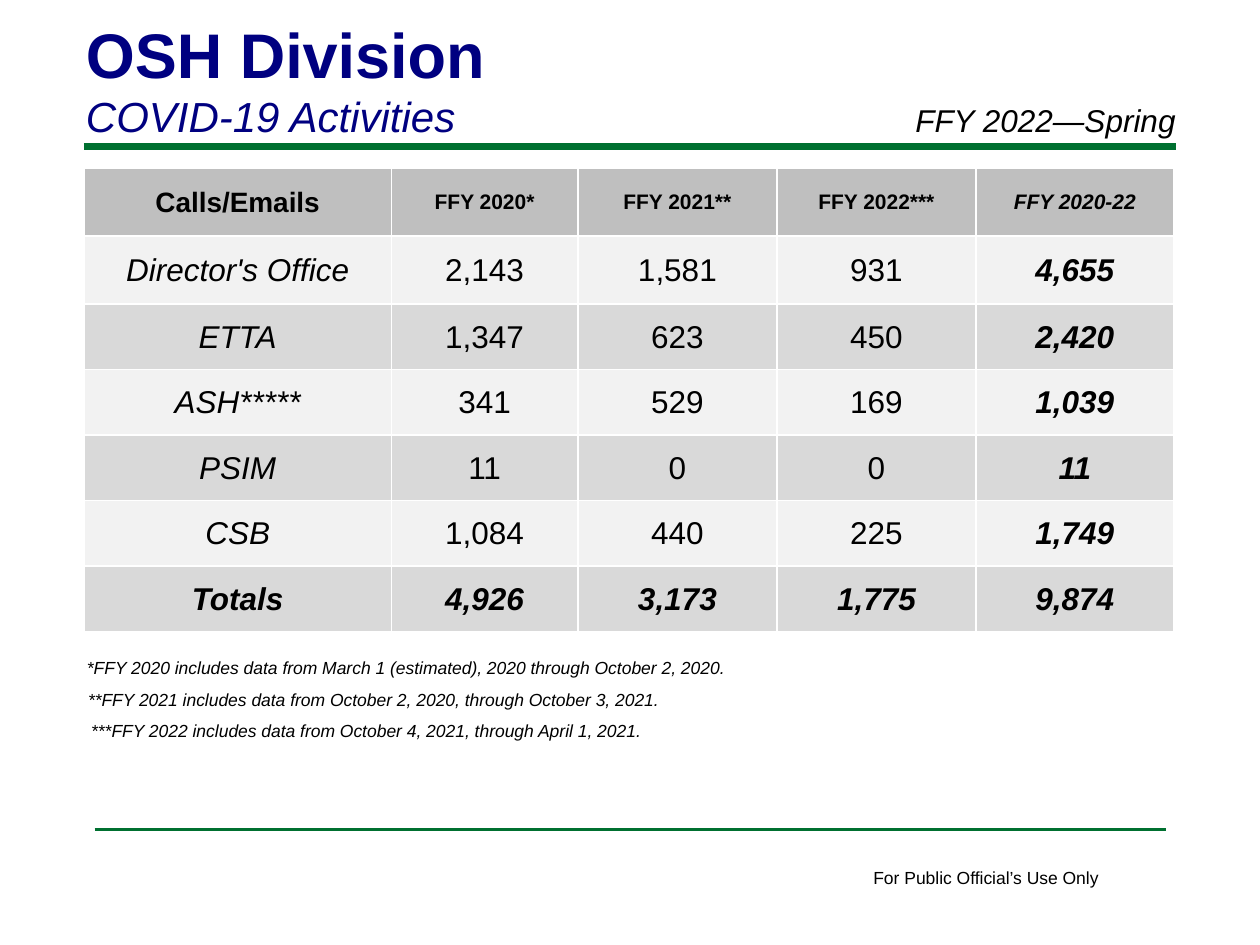
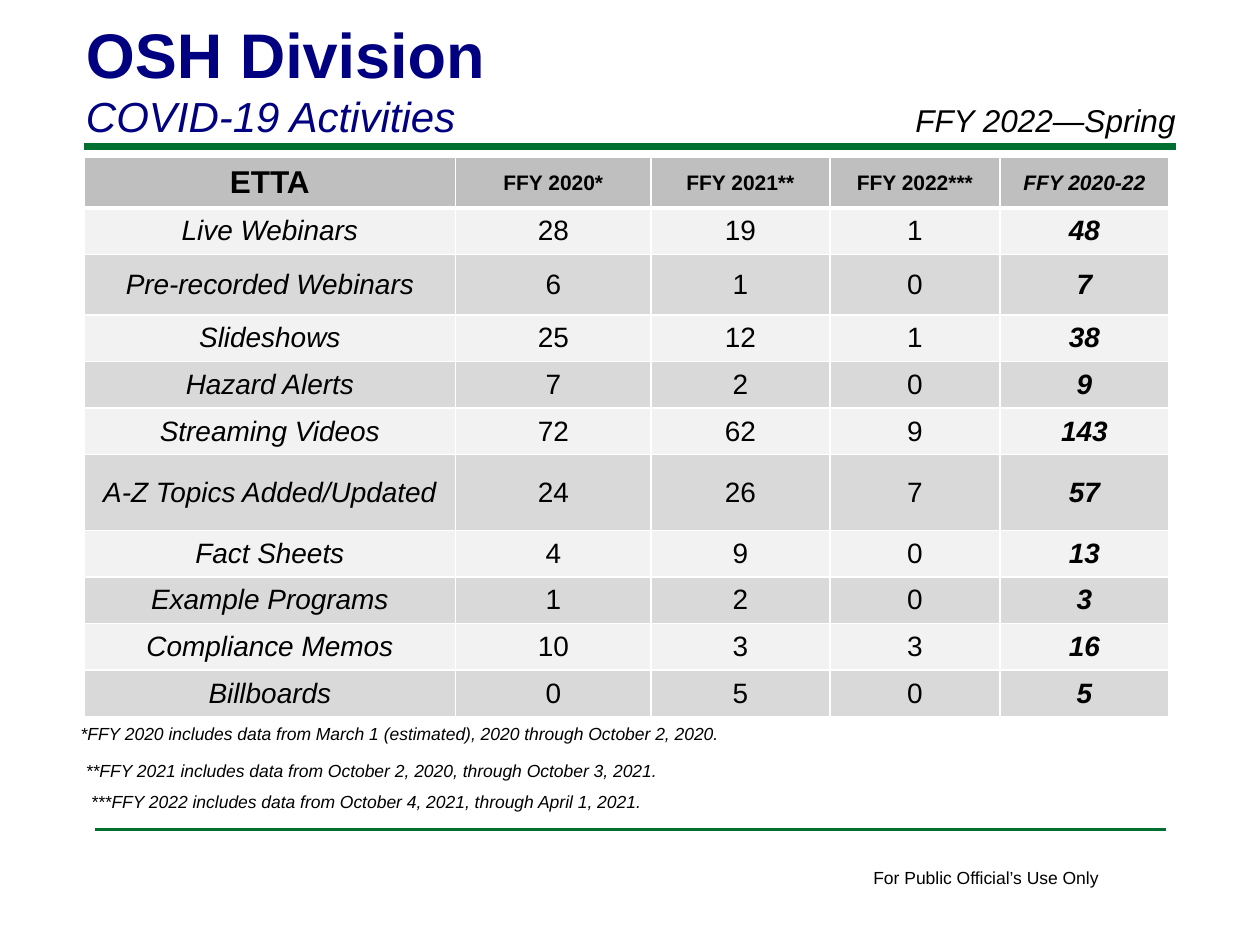
from lxml import etree
from pptx import Presentation
from pptx import util as u
from pptx.dml.color import RGBColor
from pptx.enum import shapes, text
from pptx.oxml import ns

FONT = "Arial"
GREEN = RGBColor(0x00, 0x70, 0x30)
NAVY = RGBColor(0x00, 0x00, 0x80)
BLACK = RGBColor(0x00, 0x00, 0x00)
WHITE = RGBColor(0xFF, 0xFF, 0xFF)
HEAD_GREY = RGBColor(0xBF, 0xBF, 0xBF)
BAND_GREYS = RGBColor(0xF2, 0xF2, 0xF2), RGBColor(0xD9, 0xD9, 0xD9)

# The slide is a grid of square units, 12 to the inch
UNIT = u.Inches(1) // 12
COLS, ROWS = 120, 90

YEARS = ["FFY 2020*", "FFY 2021**", "FFY 2022***", "FFY 2020-22"]
NOTES = [
    "*FFY 2020 includes data from March 1 (estimated), 2020 through October 2, 2020.",
    "**FFY 2021 includes data from October 2, 2020, through October 3, 2021.",
    "***FFY 2022 includes data from October 4, 2021, through April 1, 2021.",
]
CALLS = {
    "Director's Office": (2143, 1581, 931),
    "ETTA": (1347, 623, 450),
    "ASH*****": (341, 529, 169),
    "PSIM": (11, 0, 0),
    "CSB": (1084, 440, 225),
}
MATERIALS = {
    "Live Webinars": (28, 19, 1),
    "Pre-recorded Webinars": (6, 1, 0),
    "Slideshows": (25, 12, 1),
    "Hazard Alerts": (7, 2, 0),
    "Streaming Videos": (72, 62, 9),
    "A-Z Topics Added/Updated": (24, 26, 7),
    "Fact Sheets": (4, 9, 0),
    "Example Programs": (1, 2, 0),
    "Compliance Memos": (10, 3, 3),
    "Billboards": (0, 5, 0),
}


def grid(*lengths):
    return [round(n * UNIT) for n in lengths]


def set_attrs(obj, **values):
    for name, value in values.items():
        setattr(obj, name, value)


def write(p, words, size, color=BLACK, bold=False, italic=False):
    r = p.add_run()
    r.text = words
    set_attrs(r.font, name=FONT, size=u.Pt(size), bold=bold, italic=italic)
    r.font.color.rgb = color


def add_text(s, box, lines, wrap=True, anchor=text.MSO_ANCHOR.TOP):
    """Each line is a dict of arguments for write()."""
    tf = s.shapes.add_textbox(*grid(*box)).text_frame
    set_attrs(tf, word_wrap=wrap, vertical_anchor=anchor,
              auto_size=text.MSO_AUTO_SIZE.SHAPE_TO_FIT_TEXT)
    for i, line in enumerate(lines):
        write(tf.add_paragraph() if i else tf.paragraphs[0], **line)


def add_rule(s, left, row, width):
    """Green rule centred on the slide."""
    line = s.shapes.add_connector(
        shapes.MSO_CONNECTOR.STRAIGHT, *grid(left, row, COLS - left, row))
    line.line.color.rgb = GREEN
    line.line.width = u.Pt(width)
    etree.SubElement(line._element.spPr, ns.qn("a:effectLst"))


def add_header(s):
    add_text(s, (7, 0.75, 99, 13.3), [
        dict(words="OSH Division", size=36, color=NAVY, bold=True),
        dict(words="COVID-19 Activities", size=24, color=NAVY, italic=True),
    ], anchor=text.MSO_ANCHOR.BOTTOM)
    add_text(s, (86, 9, 30, 4.8),
             [dict(words="FFY 2022—Spring", size=18, italic=True)])
    add_rule(s, 8, 14, 4)


def add_footer(s):
    add_rule(s, 9, 79, 2)
    add_text(s, (82, 82, 24, 3.2),
             [dict(words="For Public Official’s Use Only", size=10)], wrap=False)


def add_notes(s, corners):
    for (left, top), note in zip(corners, NOTES):
        add_text(s, (left, top, 104, 3.2), [dict(words=note, size=10, italic=True)])


def set_borders(cell, bottom):
    tc_pr = cell._tc.get_or_add_tcPr()
    for side in "LRTB":
        width = u.Pt(bottom if side == "B" else 1)
        ln = etree.SubElement(tc_pr, ns.qn(f"a:ln{side}"), w=str(width))
        fill = etree.SubElement(ln, ns.qn("a:solidFill"))
        etree.SubElement(fill, ns.qn("a:srgbClr"), val=str(WHITE))


def fill_cell(cell, words, color, tight, bottom=1, **style):
    set_borders(cell, bottom)
    cell.fill.solid()
    cell.fill.fore_color.rgb = color
    cell.vertical_anchor = text.MSO_ANCHOR.MIDDLE
    if tight:
        edge = u.Inches(0.01)
        set_attrs(cell, margin_left=edge, margin_right=edge,
                  margin_top=edge, margin_bottom=0)
    p = cell.text_frame.paragraphs[0]
    p.alignment = text.PP_ALIGN.CENTER
    write(p, words, **style)


def add_counts(s, left, top, title, counts, widths, heights, title_size,
               body_size, tight, head_rule, totals=False):
    """Table of yearly counts; widths and heights are in inches."""
    body = [(name, *values, sum(values)) for name, values in counts.items()]
    if totals:
        body.append(("Totals", *map(sum, list(zip(*body))[1:])))

    frame = s.shapes.add_table(
        len(heights), len(widths), *grid(left, top),
        u.Inches(sum(widths)), u.Inches(sum(heights)))
    table = frame.table
    set_attrs(table, first_row=False, horz_banding=False)
    for col, width in zip(table.columns, widths):
        col.width = u.Inches(width)
    for row, height in zip(table.rows, heights):
        row.height = u.Inches(height)

    # Heading row
    last = len(widths) - 1
    for c, words in enumerate([title] + YEARS):
        fill_cell(table.cell(0, c), words, HEAD_GREY, tight or c > 0, head_rule,
                  size=12 if c else title_size, bold=True, italic=c == last)

    # Banded body: names in italics, sums in bold italics
    for r, row in enumerate(body):
        is_total = totals and r == len(body) - 1
        for c, value in enumerate(row):
            is_sum = is_total or c == last
            fill_cell(table.cell(r + 1, c), f"{value:,}" if c else value,
                      BAND_GREYS[r % 2], tight, size=body_size,
                      bold=is_sum, italic=is_sum or c == 0)


def add_slide(prs, table, note_corners):
    s = prs.slides.add_slide(prs.slide_layouts[6])
    add_header(s)
    add_counts(s, **table)
    add_notes(s, note_corners)
    add_footer(s)


def main():
    prs = Presentation()
    set_attrs(prs, slide_width=COLS * UNIT, slide_height=ROWS * UNIT)

    # Calls and e-mails by office
    add_slide(prs, dict(
        left=8, top=16, title="Calls/Emails", counts=CALLS,
        widths=[2.44, 1.48, 1.58, 1.58, 1.57], heights=[0.54] * 2 + [0.52] * 5,
        title_size=16, body_size=18, tight=True, head_rule=1, totals=True,
    ), [(7.1, 62), (7.2, 65), (7.5, 68)])

    # Training and outreach materials, two rows taller than the rest
    add_slide(prs, dict(
        left=8, top=15, title="ETTA", counts=MATERIALS,
        widths=[2.95, 1.55, 1.42, 1.35, 1.34],
        heights=[0.39, 0.37, 0.48] + [0.37] * 3 + [0.6] + [0.37] * 4,
        title_size=18, body_size=16, tight=False, head_rule=3,
    ), [(6.5, 68.3), (7, 71.75), (7.5, 74.75)])

    prs.save("out.pptx")


if __name__ == "__main__":
    main()
